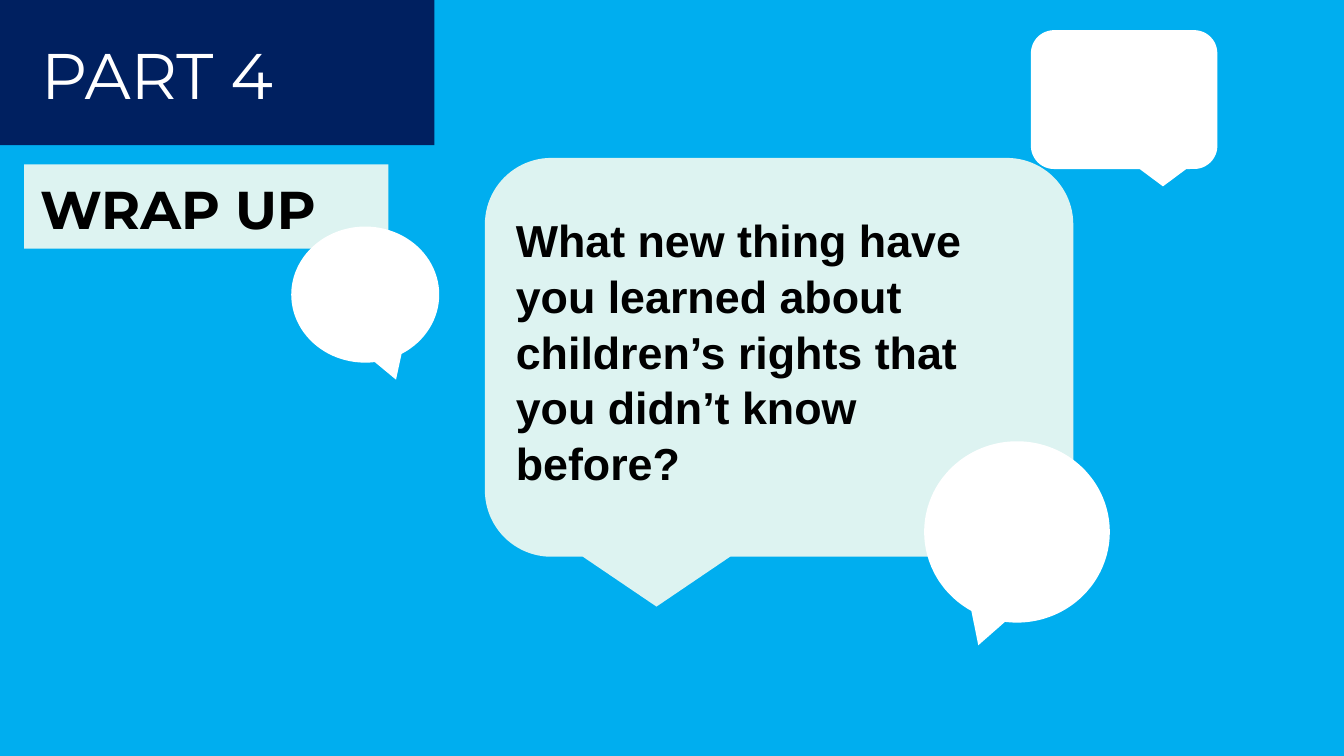
from pptx import Presentation
from pptx.dml.color import RGBColor
from pptx.enum.shapes import MSO_SHAPE
from pptx.enum.text import MSO_AUTO_SIZE
from pptx.util import Cm, Pt

SKY = RGBColor(0x00, 0xAE, 0xEF)
NAVY = RGBColor(0x00, 0x20, 0x60)
MINT = RGBColor(0xDD, 0xF3, 0xF1)
WHITE = RGBColor(0xFF, 0xFF, 0xFF)
BLACK = RGBColor(0x00, 0x00, 0x00)

ROUNDED = MSO_SHAPE.ROUNDED_RECTANGULAR_CALLOUT
OVAL = MSO_SHAPE.OVAL_CALLOUT
TAIL_LEFT, TAIL_RIGHT = -0.2083, 0.2083
TAIL_DEPTH = 0.625


class WrapUpSlide:
    """Holds the current slide and its shared text style."""

    heading_font = "Montserrat"
    body_font = "Arial"
    heading_inset = Cm(0.3)
    body_inset = Cm(0.25)

    def __init__(self, presentation):
        self.slide = presentation.slides.add_slide(presentation.slide_layouts[6])
        fill = self.slide.background.fill
        fill.solid()
        fill.fore_color.rgb = SKY

    def panel(self, box, color, kind=MSO_SHAPE.RECTANGLE):
        shape = self.slide.shapes.add_shape(kind, *map(Cm, box))
        shape.shadow.inherit = False
        shape.fill.solid()
        shape.fill.fore_color.rgb = color
        shape.line.fill.background()
        return shape

    def bubble(self, box, color, kind, tail):
        """Add a speech bubble whose tail points down, left or right of centre."""
        shape = self.panel(box, color, kind)
        shape.adjustments[0] = tail
        shape.adjustments[1] = TAIL_DEPTH

    def text(self, box, words, font, color, inset, spacing=1.0):
        frame = self.slide.shapes.add_textbox(*map(Cm, box)).text_frame
        frame_format = {"word_wrap": True, "auto_size": MSO_AUTO_SIZE.SHAPE_TO_FIT_TEXT}
        for side in ("left", "top", "right", "bottom"):
            frame_format[f"margin_{side}"] = inset
        for name, value in frame_format.items():
            setattr(frame, name, value)
        paragraph = frame.paragraphs[0]
        paragraph.line_spacing = spacing
        run = paragraph.add_run()
        run.text = words
        for name, value in font.items():
            setattr(run.font, name, value)
        run.font.color.rgb = color

    def heading(self, box, words, size, color, bold=False, spacing=1.0):
        font = {"name": self.heading_font, "size": Pt(size), "bold": bold}
        self.text(box, words, font, color, self.heading_inset, spacing)

    def question(self, box, words):
        font = {"name": self.body_font, "size": Pt(32), "bold": True}
        self.text(box, words, font, BLACK, self.body_inset, spacing=1.04)


def main():
    presentation = Presentation()
    presentation.slide_width = Cm(33.87)
    presentation.slide_height = Cm(19.05)

    wrap_up = WrapUpSlide(presentation)
    wrap_up.bubble((12.22, 3.98, 14.83, 10.05), MINT, ROUNDED, TAIL_LEFT)
    wrap_up.bubble((23.29, 11.12, 4.68, 4.57), WHITE, OVAL, TAIL_LEFT)
    wrap_up.panel((0.61, 4.14, 9.18, 2.13), MINT)
    wrap_up.panel((0, 0, 10.95, 3.66), NAVY)
    wrap_up.heading((0.74, 0.81, 10.21, 2.49), "PART 4", 46, WHITE, spacing=0.9)
    wrap_up.heading((0.71, 4.14, 10.29, 2.26), "WRAP UP", 38, BLACK, bold=True)
    wrap_up.bubble((25.98, 0.76, 4.7, 3.5), WHITE, ROUNDED, TAIL_RIGHT)
    wrap_up.bubble((7.34, 5.71, 3.73, 3.43), WHITE, OVAL, TAIL_RIGHT)
    wrap_up.question(
        (12.75, 5.05, 12.07, 7.09),
        "What new thing have you learned about children’s rights "
        "that you didn’t know before?",
    )
    presentation.save("out.pptx")


if __name__ == "__main__":
    main()
